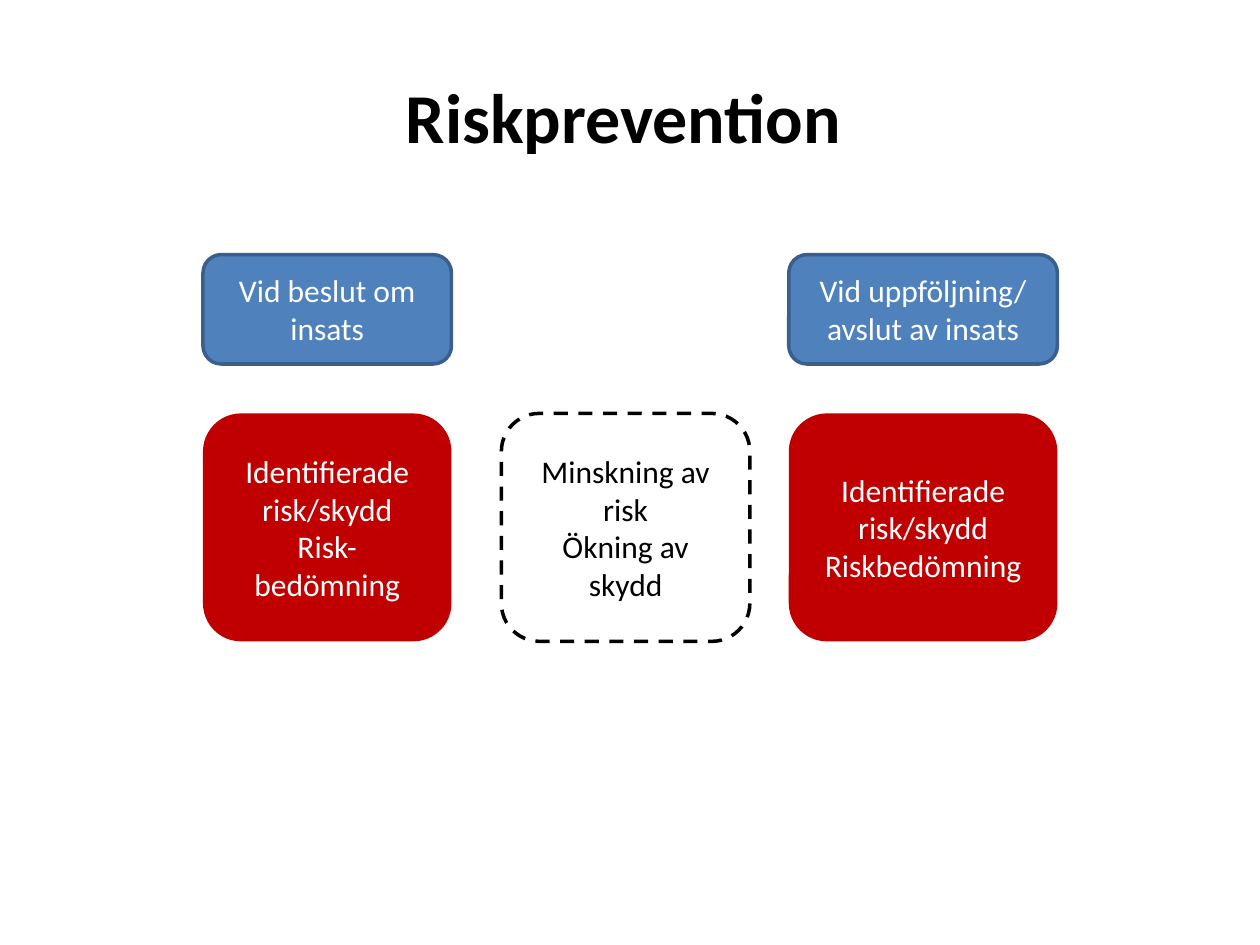
from dataclasses import dataclass

from pptx import Presentation
from pptx import util as u
from pptx.dml.color import RGBColor
from pptx.enum import dml, shapes, text


@dataclass(frozen=True)
class Theme:
    font: str = "Calibri"
    head: int = 40
    body: int = 18
    edge: int = 2
    black: str = "000000"
    white: str = "FFFFFF"
    blue: str = "4F81BD"
    navy: str = "3A5F8C"
    red: str = "C00000"


THEME = Theme()
LEFT, MID, RIGHT = (116, 142), (286.5, 142), (450.75, 153.5)
TOP, MAIN = (145.5, 62.5), (236.25, 130.25)


def color(code):
    return RGBColor.from_string(code)


def write(shape, words, size=THEME.body, ink=THEME.white, bold=False):
    frame = shape.text_frame
    frame.word_wrap = True
    frame.vertical_anchor = text.MSO_ANCHOR.MIDDLE
    frame.text = words
    for para in frame.paragraphs:
        para.alignment = text.PP_ALIGN.CENTER
        font = para.runs[0].font
        font.name, font.size, font.bold = THEME.font, u.Pt(size), bold
        font.color.rgb = color(ink)


def title(slide, words):
    shape = slide.shapes.title
    shape.left, shape.top = u.Pt(36.75), u.Pt(21)
    shape.width, shape.height = u.Pt(648), u.Pt(90)
    write(shape, words, size=THEME.head, ink=THEME.black, bold=True)


def box(slide, col, row, words, fill=None, line=None, dash=None, ink=THEME.white):
    (left, width), (top, height) = col, row
    shape = slide.shapes.add_shape(
        shapes.MSO_SHAPE.ROUNDED_RECTANGLE,
        u.Pt(left), u.Pt(top), u.Pt(width), u.Pt(height))
    shape.shadow.inherit = False
    if fill:
        shape.fill.solid()
        shape.fill.fore_color.rgb = color(fill)
    else:
        shape.fill.background()
    if line:
        shape.line.color.rgb = color(line)
        shape.line.width = u.Pt(THEME.edge)
        shape.line.dash_style = dash
    else:
        shape.line.fill.background()
    write(shape, words, ink=ink)


def main():
    deck = Presentation()
    deck.slide_width, deck.slide_height = u.Pt(720), u.Pt(540)
    slide = deck.slides.add_slide(deck.slide_layouts.get_by_name("Title Only"))

    title(slide, "Riskprevention ")
    for col, words in ((LEFT, "Vid beslut om insats"),
                       (RIGHT, "Vid uppföljning/\navslut av insats")):
        box(slide, col, TOP, words, fill=THEME.blue, line=THEME.navy)
    for col, words in ((LEFT, "Risk-bedömning"), (RIGHT, "Riskbedömning")):
        box(slide, col, MAIN, "Identifierade risk/skydd\n" + words, fill=THEME.red)
    box(slide, MID, MAIN, "Minskning av risk\nÖkning av skydd",
        line=THEME.black, dash=dml.MSO_LINE.DASH, ink=THEME.black)

    deck.save("out.pptx")


if __name__ == "__main__":
    main()
